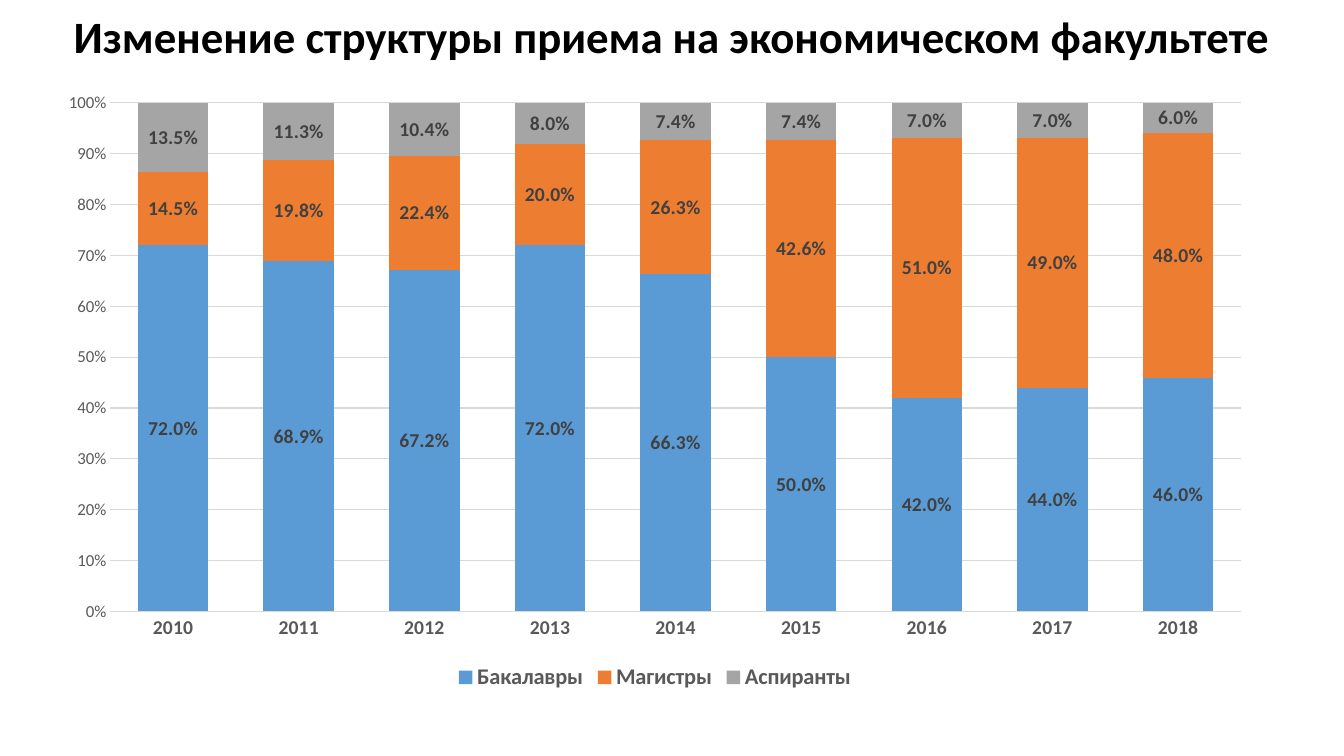
import pptx
import pptx.chart.data
import pptx.dml.color
import pptx.enum.chart
import pptx.enum.text
import pptx.util

Inches = pptx.util.Inches
Pt = pptx.util.Pt
RGBColor = pptx.dml.color.RGBColor
enum = pptx.enum.chart

BLACK = RGBColor(0x00, 0x00, 0x00)
DARK = RGBColor(0x40, 0x40, 0x40)
GRAY = RGBColor(0x59, 0x59, 0x59)
GRID = RGBColor(0xD9, 0xD9, 0xD9)
BLUE = RGBColor(0x5B, 0x9B, 0xD5)
ORANGE = RGBColor(0xED, 0x7D, 0x31)
SILVER = RGBColor(0xA5, 0xA5, 0xA5)

FONT = "Calibri"
TITLE = "Изменение структуры приема на экономическом факультете"
YEARS = [str(year) for year in range(2010, 2019)]
GROUPS = [
    ("Бакалавры", BLUE,
     [0.72, 0.689, 0.672, 0.72, 0.663, 0.5, 0.42, 0.44, 0.46]),
    ("Магистры", ORANGE,
     [0.145, 0.198, 0.224, 0.2, 0.263, 0.426, 0.51, 0.49, 0.48]),
    ("Аспиранты", SILVER,
     [0.135, 0.113, 0.104, 0.08, 0.074, 0.074, 0.07, 0.07, 0.06]),
]


def set_font(font, size, color, bold=False):
    font.name = FONT
    font.size = Pt(size)
    font.bold = bold
    font.color.rgb = color


def add_title(slide):
    box = slide.shapes.add_textbox(
        Inches(0), Inches(0.15), Inches(13.33), Inches(0.48))
    frame = box.text_frame
    frame.word_wrap = True
    frame.vertical_anchor = pptx.enum.text.MSO_ANCHOR.MIDDLE
    frame.text = TITLE
    line = frame.paragraphs[0]
    line.alignment = pptx.enum.text.PP_ALIGN.CENTER
    line.line_spacing = 0.9
    set_font(line.runs[0].font, 32, BLACK, True)


def style_bars(plot):
    plot.gap_width = 78
    plot.overlap = 100
    plot.vary_by_categories = False
    for series, (_, color, _) in zip(plot.series, GROUPS):
        series.format.fill.solid()
        series.format.fill.fore_color.rgb = color
        labels = series.data_labels
        labels.show_value = True
        labels.number_format = "0.0%"
        labels.number_format_is_linked = False
        labels.position = enum.XL_LABEL_POSITION.CENTER
        set_font(labels.font, 14, DARK, True)


def style_axes(chart):
    for axis in (chart.category_axis, chart.value_axis):
        axis.major_tick_mark = enum.XL_TICK_MARK.NONE
        axis.minor_tick_mark = enum.XL_TICK_MARK.NONE
        axis.format.line.fill.background()
    set_font(chart.category_axis.tick_labels.font, 14, GRAY, True)

    # Percent scale with light grid lines
    scale = chart.value_axis
    scale.minimum_scale = 0
    scale.maximum_scale = 1
    scale.major_unit = 0.1
    scale.tick_labels.number_format = "0%"
    scale.tick_labels.number_format_is_linked = False
    set_font(scale.tick_labels.font, 12, GRAY)
    grid = scale.major_gridlines.format.line
    grid.color.rgb = GRID
    grid.width = Pt(0.75)


def add_bars(slide):
    data = pptx.chart.data.CategoryChartData(number_format="0.0%")
    data.categories = YEARS
    for name, _, values in GROUPS:
        data.add_series(name, values)
    chart = slide.shapes.add_chart(
        enum.XL_CHART_TYPE.COLUMN_STACKED_100,
        Inches(0.44), Inches(0.8), Inches(12.11), Inches(6.1), data).chart
    chart.has_title = False
    set_font(chart.font, 10, BLACK)
    style_bars(chart.plots[0])
    style_axes(chart)

    # Legend under the bars
    chart.has_legend = True
    chart.legend.position = enum.XL_LEGEND_POSITION.BOTTOM
    chart.legend.include_in_layout = False
    set_font(chart.legend.font, 16, GRAY, True)


def main():
    deck = pptx.Presentation()
    deck.slide_width = Inches(13.33)
    deck.slide_height = Inches(7.5)
    slide = deck.slides.add_slide(deck.slide_layouts[6])
    add_title(slide)
    add_bars(slide)
    deck.save("out.pptx")


if __name__ == "__main__":
    main()
